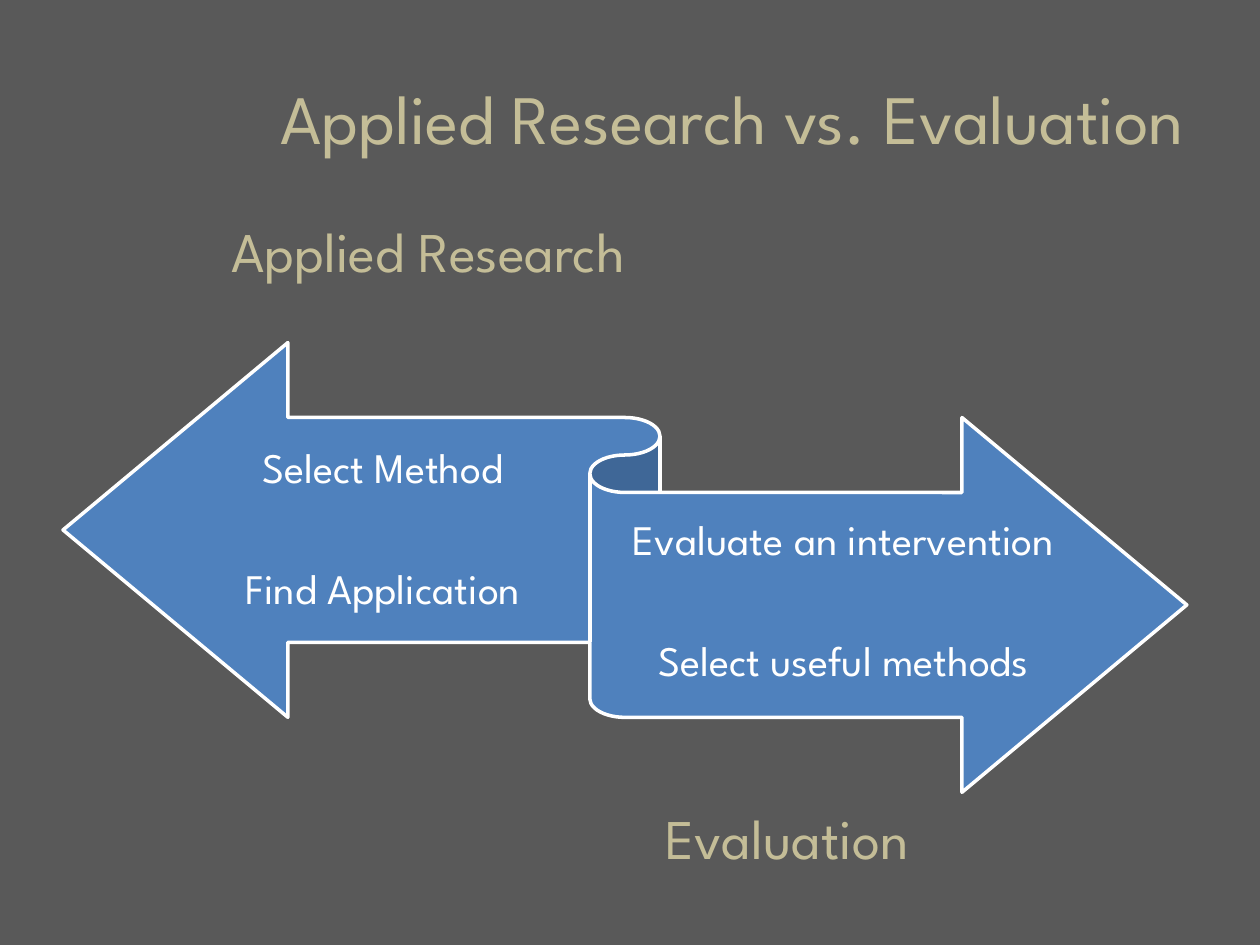
from dataclasses import dataclass
from typing import Any

from pptx import Presentation
from pptx.dml.color import RGBColor
from pptx.enum.shapes import MSO_SHAPE
from pptx.enum.text import MSO_ANCHOR, PP_ALIGN
from pptx.util import Pt

FONT = "League Spartan"
COLOURS = {"background": "595959", "heading": "C4BD97", "ribbon": "4F81BD", "white": "FFFFFF"}


@dataclass(frozen=True)
class Label:
    """Text with its frame and style, lengths in points."""

    lines: tuple[str, ...]
    frame: tuple[float, float, float, float]
    size: float
    colour: str = "heading"
    align: PP_ALIGN = PP_ALIGN.CENTER
    anchor: MSO_ANCHOR = MSO_ANCHOR.TOP
    insets: tuple[float, float, float, float] = (7.2, 3.6, 7.2, 3.6)
    line_spacing: float = 1.0
    gap: float = 0


def arrow_label(lines: tuple[str, ...], frame: tuple[float, float, float, float]) -> Label:
    """Describe the text on one arrow of the ribbon."""
    return Label(lines, frame, 24, "white", anchor=MSO_ANCHOR.MIDDLE,
                 insets=(0, 6.5, 0, 7.2), line_spacing=0.9, gap=43)


RIBBON_FRAME = (36, 195.8, 642.2, 257)
HEADINGS = (
    Label(("Applied Research vs. Evaluation",), (36, 21.6, 648, 90), 39.6,
          align=PP_ALIGN.RIGHT, anchor=MSO_ANCHOR.MIDDLE),
    Label(("Applied Research",), (121.7, 120.2, 246.2, 85), 32),
    Label(("Evaluation",), (347.8, 455.8, 203.8, 46), 32),
)
ARROW_LABELS = (
    arrow_label(("Select Method", "Find Application"), (113, 240.5, 211.7, 126)),
    arrow_label(("Evaluate an intervention", "Select useful methods"), (318.2, 281.5, 327.6, 126)),
)


def colour(name: str) -> RGBColor:
    """Look up a named colour."""
    return RGBColor.from_string(COLOURS[name])


def draw_label(shapes: Any, label: Label) -> None:
    """Add a text box with one paragraph for each line."""
    box = shapes.add_textbox(*map(Pt, label.frame))
    frame = box.text_frame
    frame.word_wrap = True
    frame.vertical_anchor = label.anchor
    frame.margin_left, frame.margin_top, frame.margin_right, frame.margin_bottom = map(Pt, label.insets)
    frame.text = "\n".join(label.lines)
    for index, para in enumerate(frame.paragraphs):
        para.alignment = label.align
        para.line_spacing = label.line_spacing
        para.space_before = Pt(label.gap if index else 0)
        para.font.name = FONT
        para.font.size = Pt(label.size)
        para.font.color.rgb = colour(label.colour)


def draw_ribbon(shapes: Any) -> None:
    """Add the two-way ribbon."""
    ribbon = shapes.add_shape(MSO_SHAPE.LEFT_RIGHT_RIBBON, *map(Pt, RIBBON_FRAME))
    ribbon.shadow.inherit = False
    ribbon.fill.solid()
    ribbon.fill.fore_color.rgb = colour("ribbon")
    ribbon.line.color.rgb = colour("white")
    ribbon.line.width = Pt(2)


def main() -> None:
    """Build and save the slide."""
    deck = Presentation()
    deck.slide_width, deck.slide_height = Pt(720), Pt(540)
    page = deck.slides.add_slide(deck.slide_layouts[6])
    page.background.fill.solid()
    page.background.fill.fore_color.rgb = colour("background")
    diagram = page.shapes.add_group_shape()
    draw_ribbon(diagram.shapes)
    for label in ARROW_LABELS:
        draw_label(diagram.shapes, label)
    for label in HEADINGS:
        draw_label(page.shapes, label)
    deck.save("out.pptx")


if __name__ == "__main__":
    main()
